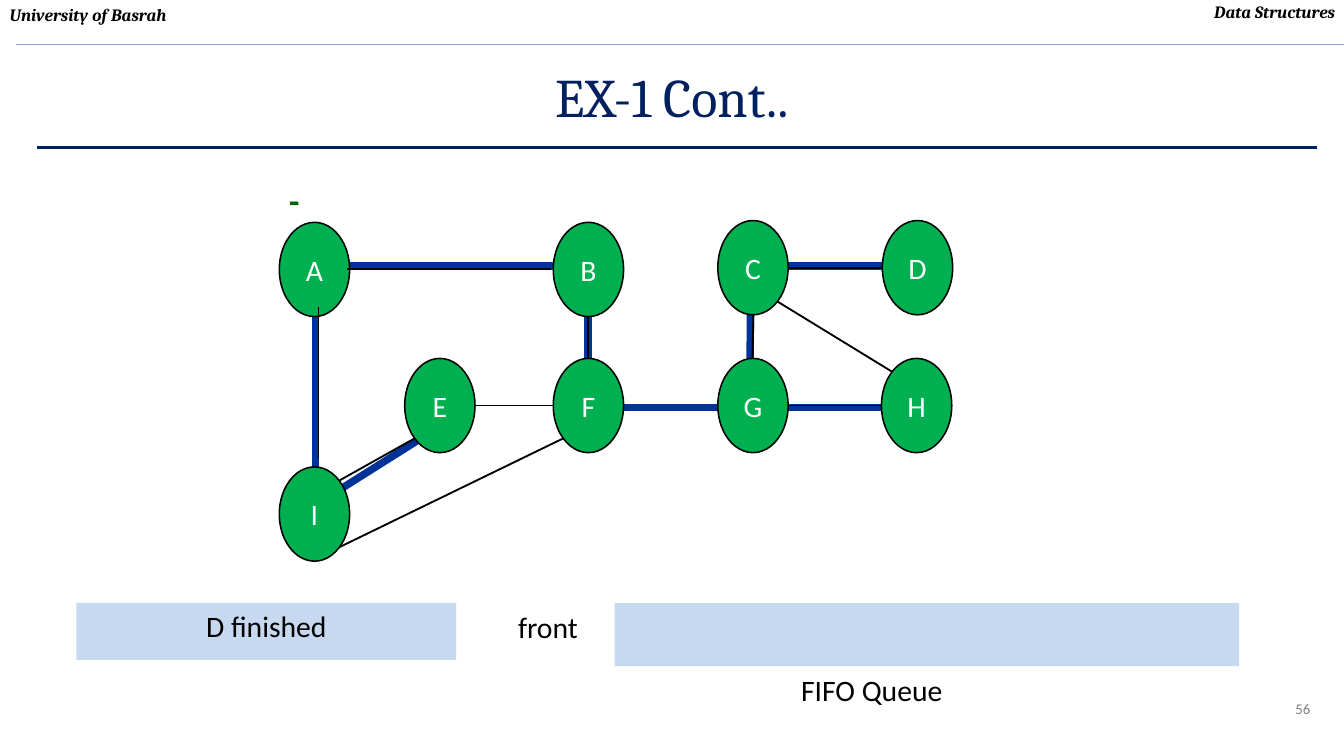
from lxml import etree
from pptx import Presentation
from pptx.dml.color import RGBColor
from pptx.enum.shapes import MSO_CONNECTOR, MSO_SHAPE
from pptx.enum.text import MSO_ANCHOR, PP_ALIGN
from pptx.oxml.ns import qn
from pptx.util import Inches, Pt

LEFT, CENTER, RIGHT = PP_ALIGN.LEFT, PP_ALIGN.CENTER, PP_ALIGN.RIGHT
TOP, MIDDLE = MSO_ANCHOR.TOP, MSO_ANCHOR.MIDDLE
OVAL, RECT = MSO_SHAPE.OVAL, MSO_SHAPE.RECTANGLE
STRAIGHT = MSO_CONNECTOR.STRAIGHT

BLACK = RGBColor(0x00, 0x00, 0x00)
WHITE = RGBColor(0xFF, 0xFF, 0xFF)
GRAY = RGBColor(0x80, 0x80, 0x80)
NAVY = RGBColor(0x00, 0x20, 0x60)
BLUE = RGBColor(0x00, 0x33, 0x99)
RULE_BLUE = RGBColor(0x8A, 0xA6, 0xDC)
PALE_BLUE = RGBColor(0xC6, 0xD9, 0xF1)
GREEN = RGBColor(0x00, 0xB0, 0x50)
DARK_GREEN = RGBColor(0x00, 0x66, 0x00)

SLIDE_W, SLIDE_H = 15.11, 8.5
NODE_W, NODE_H = 0.79, 1.06

NODES = {
    "A": (0, 0.02), "B": (3.08, 0.02), "F": (3.08, 1.55),
    "I": (0, 2.77), "E": (1.41, 1.55), "H": (6.77, 1.55),
    "D": (6.78, 0), "C": (4.93, 0), "G": (4.93, 1.55),
}
COVERED_EDGE = (3.86, 2.08, 4.93, 2.08)
VISITED_EDGES = [
    (5.29, 0.51, 6.82, 0.51),
    (5.36, 2.1, 6.89, 2.1),
    (5.29, 1.9, 5.3, 0.67),
    (3.47, 2.1, 5.01, 2.1),
    (1.67, 2.4, 0.45, 3.17),
    (0.41, 0.81, 0.41, 3.25),
    (0.4, 0.51, 3.16, 0.51),
    (3.47, 0.56, 3.47, 1.77),
]
GRAPH_EDGES = [
    (0.44, 0.97, 0.44, 2.67),
    (3.47, 1.55, 3.47, 1.07),
    (2.2, 2.08, 3.08, 2.08),
    (0.68, 2.92, 1.52, 2.45),
    (0.76, 0.54, 3.05, 0.54),
    (0.68, 3.67, 3.19, 2.45),
    (5.6, 0.91, 6.89, 1.7),
    (5.72, 2.08, 6.77, 2.08),
    (5.33, 1.06, 5.32, 1.55),
    (5.72, 0.53, 6.78, 0.53),
]


def write(sp, text, size, font, color, align=LEFT, anchor=TOP, wrap=True,
          bold=False, italic=False):
    tf = sp.text_frame
    tf.word_wrap = wrap
    tf.vertical_anchor = anchor
    p = tf.paragraphs[0]
    p.alignment = align
    r = p.add_run()
    r.text = text
    r.font.size = Pt(size)
    r.font.name = font
    r.font.color.rgb = color
    r.font.bold = bold
    r.font.italic = italic


def add_label(s, x, y, w, h, text, size=24, font="Calibri", color=BLACK, **style):
    sp = s.shapes.add_textbox(Inches(x), Inches(y), Inches(w), Inches(h))
    write(sp, text, size, font, color, **style)


def add_line(s, x1, y1, x2, y2, color, width):
    line = s.shapes.add_connector(
        STRAIGHT, Inches(x1), Inches(y1), Inches(x2), Inches(y2))
    line.line.color.rgb = color
    line.line.width = Pt(width)
    etree.SubElement(line._element.spPr, qn("a:effectLst"))


def add_filled(s, kind, x, y, w, h, fill):
    sp = s.shapes.add_shape(kind, Inches(x), Inches(y), Inches(w), Inches(h))
    sp.shadow.inherit = False
    sp.fill.solid()
    sp.fill.fore_color.rgb = fill
    sp.line.fill.background()
    return sp


def add_header(s, x, y, w):
    style = dict(size=14, font="Cambria", bold=True, italic=True)
    add_label(s, x, y - 0.03, w, 0.34, "Data Structures", align=RIGHT, **style)
    add_label(s, x + 0.01, y, 7.85, 0.34, "University of Basrah", **style)
    add_line(s, x + 0.18, y + 0.5, x + w, y + 0.5, RULE_BLUE, 1.5)


def add_title(s, x, y, w, h):
    title = s.shapes.title
    title.left, title.top = Inches(x), Inches(y)
    title.width, title.height = Inches(w), Inches(h)
    write(title, "EX-1 Cont..", 44, "Cambria", NAVY, align=CENTER, anchor=MIDDLE)
    add_line(s, x + 0.42, y + h + 0.01, x + w - 0.3, y + h + 0.01, NAVY, 2)


def add_graph(s, x, y):
    def add_edge(edge, color, width):
        x1, y1, x2, y2 = edge
        add_line(s, x + x1, y + y1, x + x2, y + y2, color, width)

    add_edge(COVERED_EDGE, BLACK, 1.5)
    for edge in VISITED_EDGES:
        add_edge(edge, BLUE, 6)
    for name, (dx, dy) in NODES.items():
        node = add_filled(s, OVAL, x + dx, y + dy, NODE_W, NODE_H, GREEN)
        node.line.color.rgb = BLACK
        node.line.width = Pt(1.25)
        write(node, name, 24, "Calibri", WHITE, align=CENTER, anchor=MIDDLE, wrap=False)
    for edge in GRAPH_EDGES:
        add_edge(edge, BLACK, 1.5)
    add_label(s, x - 0.03, y - 0.49, 0.97, 0.51, "-", font="Courier New",
              color=DARK_GREEN, bold=True)


def add_queue(s, x, y):
    status = add_filled(s, RECT, x, y, 4.27, 0.64, PALE_BLUE)
    status.text_frame.margin_left = status.text_frame.margin_right = 0
    write(status, "D finished", 24, "Calibri", BLACK, align=CENTER)
    add_filled(s, RECT, x + 6.05, y, 7.02, 0.71, PALE_BLUE)
    add_label(s, x + 4.23, y + 0.02, 2.14, 0.51, "front", align=CENTER)
    add_label(s, x + 5.28, y + 0.73, 7.32, 0.51, "FIFO Queue", align=CENTER)


def main():
    prs = Presentation()
    prs.slide_width, prs.slide_height = Inches(SLIDE_W), Inches(SLIDE_H)
    s = prs.slides.add_slide(prs.slide_layouts[5])
    add_header(s, 0, 0, SLIDE_W)
    add_title(s, 0, 0.5, SLIDE_W, 1.15)
    add_graph(s, 3.14, 2.48)
    add_queue(s, 0.86, 6.78)
    add_label(s, 13.16, 7.82, 1.67, 0.7, "56", size=12, color=GRAY, align=RIGHT)
    prs.save("out.pptx")


if __name__ == "__main__":
    main()
